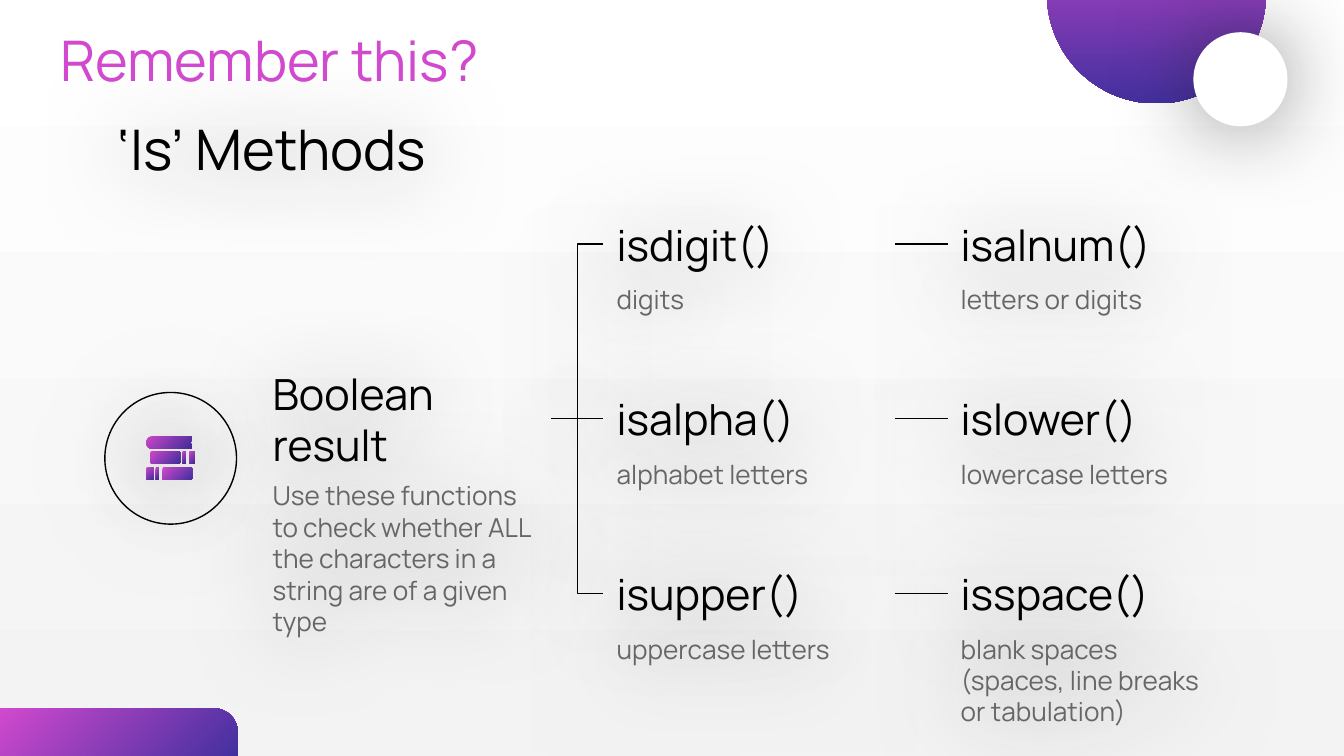
"""Build the 'Is' methods slide: a Boolean result branching into six string checks."""
import math

import lxml.etree
import pptx
import pptx.dml.color
import pptx.enum.shapes
import pptx.enum.text
import pptx.oxml.ns
import pptx.util

Inches = pptx.util.Inches
Pt = pptx.util.Pt
SHAPE = pptx.enum.shapes.MSO_SHAPE
LINE = pptx.enum.shapes.MSO_CONNECTOR
ANCHOR = pptx.enum.text.MSO_ANCHOR
PINK, PURPLE, BLACK, GRAY = "D149CE", "43309F", "000000", "666666"


def paint(fill, *colors, angle=0):
    if len(colors) == 1:
        fill.solid()
        fill.fore_color.rgb = pptx.dml.color.RGBColor.from_string(colors[0])
        return
    fill.gradient()
    fill.gradient_angle = 360 - angle
    for stop, color in zip(fill.gradient_stops, colors):
        stop.color.rgb = pptx.dml.color.RGBColor.from_string(color)


def add_shadow(sp, distance=1.5):
    qn = pptx.oxml.ns.qn
    effects = lxml.etree.SubElement(sp._element.spPr, qn("a:effectLst"))
    outer = lxml.etree.SubElement(
        effects, qn("a:outerShdw"), blurRad=str(Pt(47.2)), dist=str(Pt(distance)),
        dir="5400000", algn="bl", rotWithShape="0")
    color = lxml.etree.SubElement(outer, qn("a:srgbClr"), val="191919")
    lxml.etree.SubElement(color, qn("a:alpha"), val="50000")


prs = pptx.Presentation()
prs.slide_width = Inches(10)
prs.slide_height = Inches(10 * 9 / 16)
s = prs.slides.add_slide(prs.slide_layouts[6])
paint(s.background.fill, "FFFFFF", "F3F3F3", angle=90)

corner = s.shapes.add_shape(
    SHAPE.ROUND_1_RECTANGLE, Inches(0), Inches(5.27), Inches(1.77), Inches(0.36))
corner.adjustments[0] = 0.5
paint(corner.fill, PINK, PURPLE, angle=45)
corner.line.fill.background()
corner.shadow.inherit = False

ring = s.shapes.add_shape(
    SHAPE.OVAL, Inches(0.78), Inches(2.92), Inches(0.98), Inches(0.98))
ring.fill.background()
paint(ring.line.fill, BLACK)
ring.line.width = Pt(0.75)
add_shadow(ring)

books = s.shapes.add_group_shape()
book_height = 0.09
for x, y, w, left, right, notch in [
    (1.09, 3.25, 0.34, 0.04, 0, 0.01),
    (1.36, 3.36, 0.02, 0, 0, 0),
    (1.41, 3.36, 0.04, 0, 0.01, 0),
    (1.12, 3.36, 0.22, 0.01, 0, 0),
    (1.16, 3.48, 0.02, 0, 0, 0),
    (1.21, 3.48, 0.22, 0, 0.01, 0),
    (1.09, 3.48, 0.05, 0.01, 0, 0),
]:
    outline = []
    for radius, cx, cy, start in [
        (right, x + w - right, y + right, 270),
        (right, x + w - right, y + book_height - right, 0),
        (left, x + left, y + book_height - left, 90),
        (left, x + left, y + left, 180),
    ]:
        for step in range(5):
            turn = math.radians(start + step * 22.5)
            outline.append((1000 * (cx + radius * math.cos(turn)),
                            1000 * (cy + radius * math.sin(turn))))
        if start == 270:
            outline.append((1000 * (x + w - notch), 1000 * (y + book_height / 2)))
    builder = books.shapes.build_freeform(*outline[0], scale=Inches(0.001))
    builder.add_line_segments(outline[1:], close=True)
    book = builder.convert_to_shape()
    paint(book.fill, PINK, PURPLE, angle=45)
    book.line.fill.background()
    add_shadow(book)

columns = [1.93, 4.49, 7.05]
rows = [1.62, 2.92, 4.22]
name_height = 0.39
methods = [
    (1, 1, "isalpha()", "alphabet letters"),
    (2, 1, "islower()", "lowercase letters"),
    (1, 0, "isdigit()", "digits"),
    (2, 0, "isalnum()", "letters or digits"),
    (1, 2, "isupper()", "uppercase letters"),
    (2, 2, "isspace()", "blank spaces (spaces, line breaks or tabulation)"),
]
texts = [
    (0.78, 0.84, 8.44, 0.52, "‘Is’ Methods", 30, BLACK),
    (columns[0], rows[1], 2.17, name_height, "Boolean result", 23, BLACK),
    (columns[0], 3.47, 2.17, 0.59, "Use these functions to check whether ALL "
     "the characters in a string are of a given type", 14, GRAY),
]
for column, row, name, meaning in methods:
    x, y = columns[column], rows[row]
    texts.append((x, y, 2.17, name_height, name, 23, BLACK))
    texts.append((x, y + name_height, 2.17, 0.59, meaning, 14, GRAY))
texts.append((0.35, 0.18, 8.44, 0.52, "Remember this?", 30, PINK))

for x, y, w, h, text, size, color in texts:
    sp = s.shapes.add_textbox(Inches(x), Inches(y), Inches(w), Inches(h))
    tf = sp.text_frame
    tf.word_wrap = True
    tf.margin_left = tf.margin_right = tf.margin_top = tf.margin_bottom = Inches(0.1)
    tf.vertical_anchor = ANCHOR.TOP if color == GRAY else ANCHOR.MIDDLE
    p = tf.paragraphs[0]
    p.text = text
    p.font.name = "Manrope"
    p.font.size = Pt(size)
    paint(p.font.fill, color)
    if color != PINK:
        add_shadow(sp)

middle = rows[1] + name_height / 2
for row in rows:
    y = row + name_height / 2
    for kind, x, start_y in [(LINE.ELBOW, 4.1, middle), (LINE.STRAIGHT, 6.66, y)]:
        link = s.shapes.add_connector(
            kind, Inches(x), Inches(start_y), Inches(x + 0.39), Inches(y))
        paint(link.line.fill, BLACK)
        link.line.width = Pt(0.75)
        add_shadow(link)

for x, y, size, colors in [
    (7.79, -0.86, 1.63, (PINK, PURPLE)),
    (8.88, 0.24, 0.7, ("FFFFFF",)),
]:
    circle = s.shapes.add_shape(
        SHAPE.OVAL, Inches(x), Inches(y), Inches(size), Inches(size))
    paint(circle.fill, *colors, angle=90)
    circle.line.fill.background()
    if len(colors) == 1:
        add_shadow(circle, distance=0)
    else:
        circle.shadow.inherit = False

prs.save("out.pptx")
